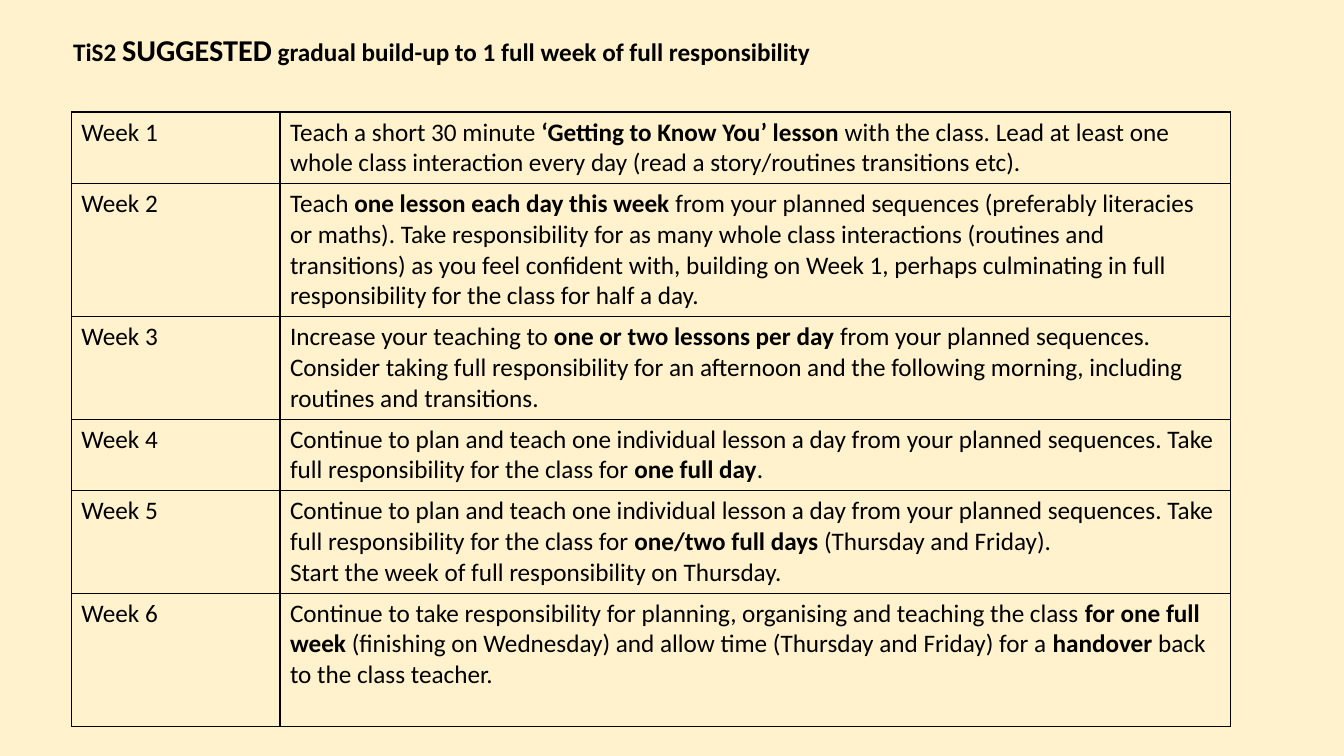
from lxml.etree import SubElement
from pptx import Presentation
from pptx.dml.color import RGBColor
from pptx.enum.text import MSO_ANCHOR, MSO_AUTO_SIZE, PP_ALIGN
from pptx.oxml.ns import qn
from pptx.util import Pt

CREAM = RGBColor(0xFF, 0xF2, 0xCC)
BLACK = RGBColor(0, 0, 0)
FONT = "Calibri"

# Content
TITLE = [("TiS2 ", 18), ("SUGGESTED", 21.6),
         (" gradual build-up to 1 full week of full responsibility", 18)]

# Row height, then paragraphs; every second piece of a paragraph is bold
WEEKS = [
    (51, [["Teach a short 30 minute ", "‘Getting to Know You’ lesson ",
           "with the class. Lead at least one whole class interaction every day "
           "(read a story/routines transitions etc)."]]),
    (95, [["Teach ", "one lesson each day this week ",
           "from your planned sequences (preferably literacies or maths). Take "
           "responsibility for as many whole class interactions (routines and "
           "transitions) as you feel confident with, building on Week 1, perhaps "
           "culminating in full responsibility for the class for half a day."]]),
    (73, [["Increase your teaching to ", "one or two lessons per day ",
           "from your planned sequences. Consider taking full responsibility for "
           "an afternoon and the following morning, including routines and "
           "transitions."]]),
    (51, [["Continue to plan and teach one individual lesson a day from your "
           "planned sequences. Take full responsibility for the class for ",
           "one full day", "."]]),
    (73, [["Continue to plan and teach one individual lesson a day from your "
           "planned sequences. Take full responsibility for the class for ",
           "one/two full days ", "(Thursday and Friday)."],
          ["Start the week of full responsibility on Thursday."]]),
    (95, [["Continue to take responsibility for planning, organising and teaching "
           "the class ", "for one full week",
           " (finishing on Wednesday) and allow time (Thursday and Friday) for a ",
           "handover", " back to the class teacher."]]),
]
COLUMN_WIDTHS = [149, 679]


def style_font(font):
    font.name = FONT
    font.color.rgb = BLACK


def add_borders(cell):
    properties = cell._tc.get_or_add_tcPr()
    for side in ("lnL", "lnR", "lnT", "lnB"):
        line = SubElement(properties, qn(f"a:{side}"), w=str(Pt(1)))
        fill = SubElement(line, qn("a:solidFill"))
        SubElement(fill, qn("a:srgbClr"), val=str(BLACK))


def fill_cell(cell, paragraphs):
    add_borders(cell)
    cell.fill.background()
    frame = cell.text_frame
    for index, pieces in enumerate(paragraphs):
        paragraph = frame.add_paragraph() if index else frame.paragraphs[0]
        style_font(paragraph.font)
        paragraph.font.size = Pt(18)
        for position, text in enumerate(pieces):
            run = paragraph.add_run()
            run.text = text
            run.font.bold = position % 2 == 1


# Slide
presentation = Presentation()
presentation.slide_width, presentation.slide_height = Pt(960), Pt(540)
slide = presentation.slides.add_slide(presentation.slide_layouts[5])
slide.background.fill.solid()
slide.background.fill.fore_color.rgb = CREAM

# Title
title = slide.shapes.title
title.left, title.top, title.width, title.height = Pt(45), Pt(22), Pt(828), Pt(51)
frame = title.text_frame
frame.auto_size = MSO_AUTO_SIZE.NONE
frame.vertical_anchor = MSO_ANCHOR.TOP
paragraph = frame.paragraphs[0]
paragraph.alignment = PP_ALIGN.LEFT
paragraph.line_spacing = 0.9
style_font(paragraph.font)
paragraph.font.bold = True
for text, size in TITLE:
    run = paragraph.add_run()
    run.text = text
    run.font.size = Pt(size)

# Table of weeks
table_height = sum(height for height, _ in WEEKS)
table = slide.shapes.add_table(len(WEEKS), len(COLUMN_WIDTHS), Pt(51), Pt(80),
                               Pt(sum(COLUMN_WIDTHS)), Pt(table_height)).table
table.first_row = False
table.horz_banding = False
for column, width in zip(table.columns, COLUMN_WIDTHS):
    column.width = Pt(width)
for index, (height, paragraphs) in enumerate(WEEKS):
    table.rows[index].height = Pt(height)
    fill_cell(table.cell(index, 0), [[f"Week {index + 1}"]])
    fill_cell(table.cell(index, 1), paragraphs)

presentation.save("out.pptx")
